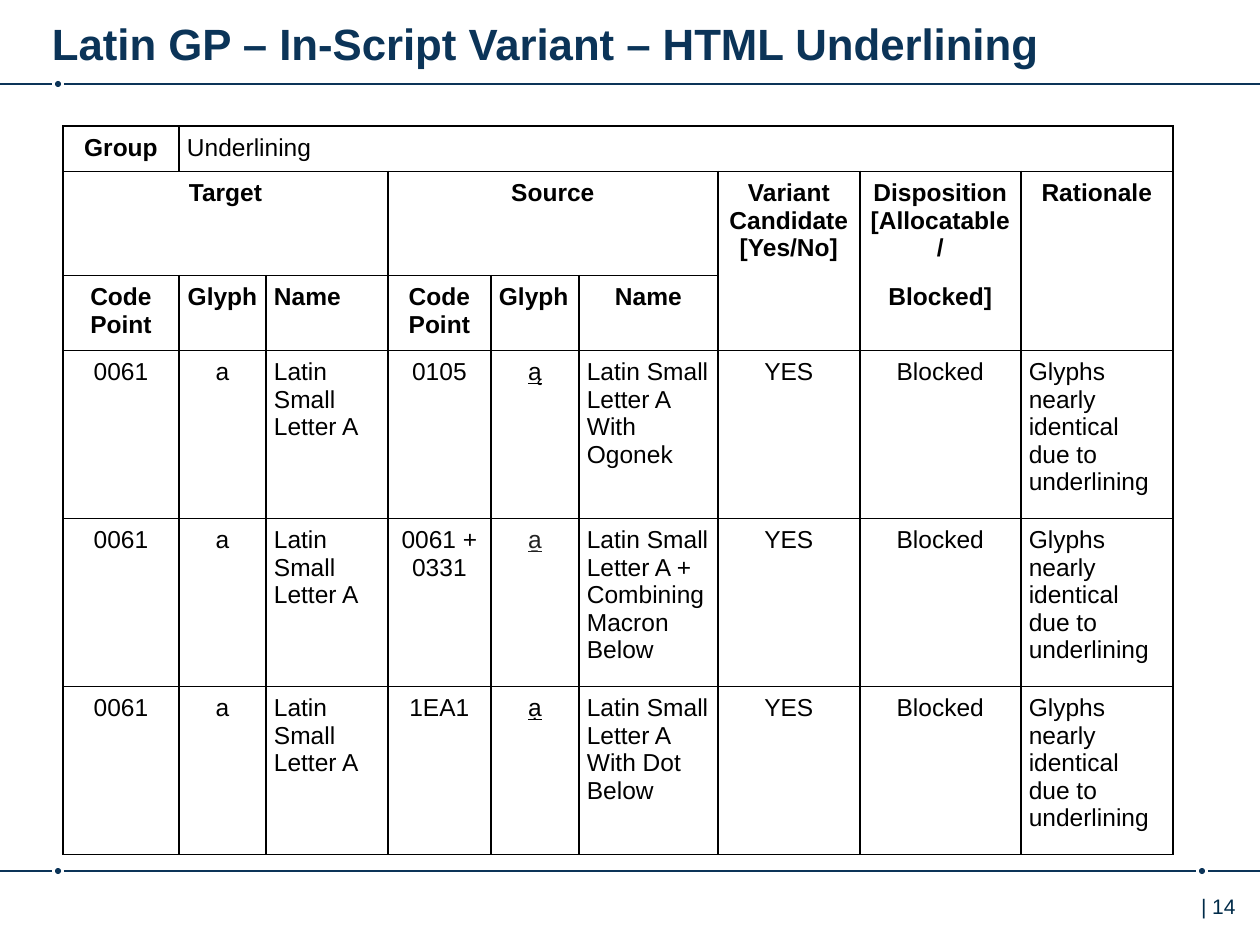
import pptx
import pptx.util
import pptx.dml.color
import pptx.enum.shapes
import pptx.enum.text
import pptx.oxml
import pptx.oxml.ns

SCALE = 914400 / 126
NAVY = pptx.dml.color.RGBColor(0x0C, 0x34, 0x58)
TITLE_NAVY = pptx.dml.color.RGBColor(0x0B, 0x34, 0x58)
NUMBER_NAVY = pptx.dml.color.RGBColor(0x00, 0x2B, 0x49)
BLACK = pptx.dml.color.RGBColor(0, 0, 0)
DARK_GRAY = pptx.dml.color.RGBColor(0x22, 0x22, 0x22)
WHITE = pptx.dml.color.RGBColor(255, 255, 255)
LEFT = pptx.enum.text.PP_ALIGN.LEFT
CENTER = pptx.enum.text.PP_ALIGN.CENTER

COLUMN_WIDTHS = [116, 87, 122, 103, 88, 139, 142, 161, 152]
ROW_HEIGHTS = [42, 92, 72, 168, 168, 168]
LEFT_COLUMNS = (2, 5, 8)
GLYPH_COLUMN = 4
DISPOSITION_COLUMN = 7
RATIONALE_COLUMN = 8
MERGES = [(0, 1, 0, 8), (1, 0, 1, 2), (1, 3, 1, 5), (1, 6, 2, 6), (1, 8, 2, 8)]
HEADERS = [
    (0, 0, "Group", CENTER, True),
    (0, 1, "Underlining", LEFT, False),
    (1, 0, "Target", CENTER, True),
    (1, 3, "Source", CENTER, True),
    (1, 6, "Variant Candidate [Yes/No]", CENTER, True),
    (1, 7, "Disposition [Allocatable /", CENTER, True),
    (1, 8, "Rationale", CENTER, True),
    (2, 0, "Code Point", CENTER, True),
    (2, 1, "Glyph", CENTER, True),
    (2, 2, "Name", LEFT, True),
    (2, 3, "Code Point", CENTER, True),
    (2, 4, "Glyph", LEFT, True),
    (2, 5, "Name", CENTER, True),
    (2, 7, "Blocked]", CENTER, True),
]
SOURCES = [
    ("0105", "ą", "Latin Small Letter A With Ogonek", BLACK),
    ("0061 + 0331", "a̱", "Latin Small Letter A + Combining Macron Below", DARK_GRAY),
    ("1EA1", "ạ", "Latin Small Letter A With Dot Below", BLACK),
]


def px(length):
    """Turn a length in px into EMU."""
    return pptx.util.Emu(round(length * SCALE))


def write_text(frame, text, size=14, color=BLACK, bold=False, underline=False, align=LEFT):
    """Write one formatted paragraph into a text frame."""
    frame.word_wrap = True
    para = frame.paragraphs[0]
    para.alignment = align
    span = para.add_run()
    span.text = text
    span.font.name = "Arial"
    span.font.size = pptx.util.Pt(size)
    span.font.bold = bold
    span.font.underline = underline
    span.font.color.rgb = color


def add_text_box(page, left, top, width, height, text, insets, **style):
    """Add a text box with insets given as left, top, right, bottom."""
    box = page.shapes.add_textbox(px(left), px(top), px(width), px(height))
    frame = box.text_frame
    frame.margin_left, frame.margin_top, frame.margin_right, frame.margin_bottom = map(px, insets)
    write_text(frame, text, **style)


def add_rule(page, left, y, width, dots):
    """Draw a horizontal rule that is broken around each dot."""
    start = left
    for dot in dots:
        add_line(page, start, dot - 6, y)
        circle = page.shapes.add_shape(
            pptx.enum.shapes.MSO_SHAPE.OVAL, px(dot - 3), px(y - 3), px(6), px(6))
        circle.shadow.inherit = False
        circle.fill.solid()
        circle.fill.fore_color.rgb = NAVY
        circle.line.fill.background()
        start = dot + 6
    add_line(page, start, left + width, y)


def add_line(page, start, end, y):
    """Draw one horizontal navy line."""
    line = page.shapes.add_connector(
        pptx.enum.shapes.MSO_CONNECTOR.STRAIGHT, px(start), px(y), px(end), px(y))
    line.line.color.rgb = NAVY
    line.line.width = pptx.util.Pt(1)
    properties = line._element.spPr
    properties.append(properties.makeelement(pptx.oxml.ns.qn("a:effectLst"), {}))


def set_borders(cell, hidden=""):
    """Give a cell black borders on every side except the hidden one."""
    properties = cell._tc.get_or_add_tcPr()
    for side in "LRTB":
        paint = "<a:noFill/>" if side == hidden else (
            f'<a:solidFill><a:srgbClr val="{BLACK}"/></a:solidFill>')
        properties.append(pptx.oxml.parse_xml(
            f'<a:ln{side} {pptx.oxml.ns.nsdecls("a")} w="12700">{paint}</a:ln{side}>'))


def add_variant_table(page, left, top):
    """Add the table of variant candidates."""
    frame = page.shapes.add_table(
        len(ROW_HEIGHTS), len(COLUMN_WIDTHS), px(left), px(top),
        px(sum(COLUMN_WIDTHS)), px(sum(ROW_HEIGHTS)))
    table = frame.table
    table.first_row = False
    table.horz_banding = False
    for column, width in zip(table.columns, COLUMN_WIDTHS):
        column.width = px(width)
    for row, height in zip(table.rows, ROW_HEIGHTS):
        row.height = px(height)
    for r in range(len(ROW_HEIGHTS)):
        for c in range(len(COLUMN_WIDTHS)):
            cell = table.cell(r, c)
            cell.margin_left = cell.margin_right = px(8)
            cell.margin_top = cell.margin_bottom = px(8)
            set_borders(cell, {1: "B", 2: "T"}.get(r, "") if c == DISPOSITION_COLUMN else "")
            if r > 2 and c == RATIONALE_COLUMN:
                cell.fill.solid()
                cell.fill.fore_color.rgb = WHITE
            else:
                cell.fill.background()
    for first_row, first_column, last_row, last_column in MERGES:
        table.cell(first_row, first_column).merge(table.cell(last_row, last_column))
    for r, c, text, align, bold in HEADERS:
        write_text(table.cell(r, c).text_frame, text, align=align, bold=bold)
    for r, (code, glyph, name, glyph_color) in enumerate(SOURCES, start=3):
        values = ["0061", "a", "Latin Small Letter A", code, glyph, name, "YES", "Blocked",
                  "Glyphs nearly identical due to underlining"]
        for c, text in enumerate(values):
            is_glyph = c == GLYPH_COLUMN
            write_text(table.cell(r, c).text_frame, text, underline=is_glyph,
                       color=glyph_color if is_glyph else BLACK,
                       align=LEFT if c in LEFT_COLUMNS else CENTER)


def main():
    """Build the slide and save the deck."""
    deck = pptx.Presentation()
    deck.slide_width, deck.slide_height = px(1260), px(945)
    page = deck.slides.add_slide(deck.slide_layouts[6])
    add_rule(page, 0, 84, 1260, [58])
    add_rule(page, 0, 871, 1260, [58, 1202])
    add_text_box(page, 1171, 888, 110, 50, "| 14", (30, 6, 0, 6),
                 size=12, color=NUMBER_NAVY)
    add_text_box(page, 52, 6, 1104, 62, "Latin GP – In-Script Variant – HTML Underlining",
                 (0, 11, 0, 0), size=25, color=TITLE_NAVY, bold=True)
    add_variant_table(page, 63, 126)
    deck.save("out.pptx")


if __name__ == "__main__":
    main()
